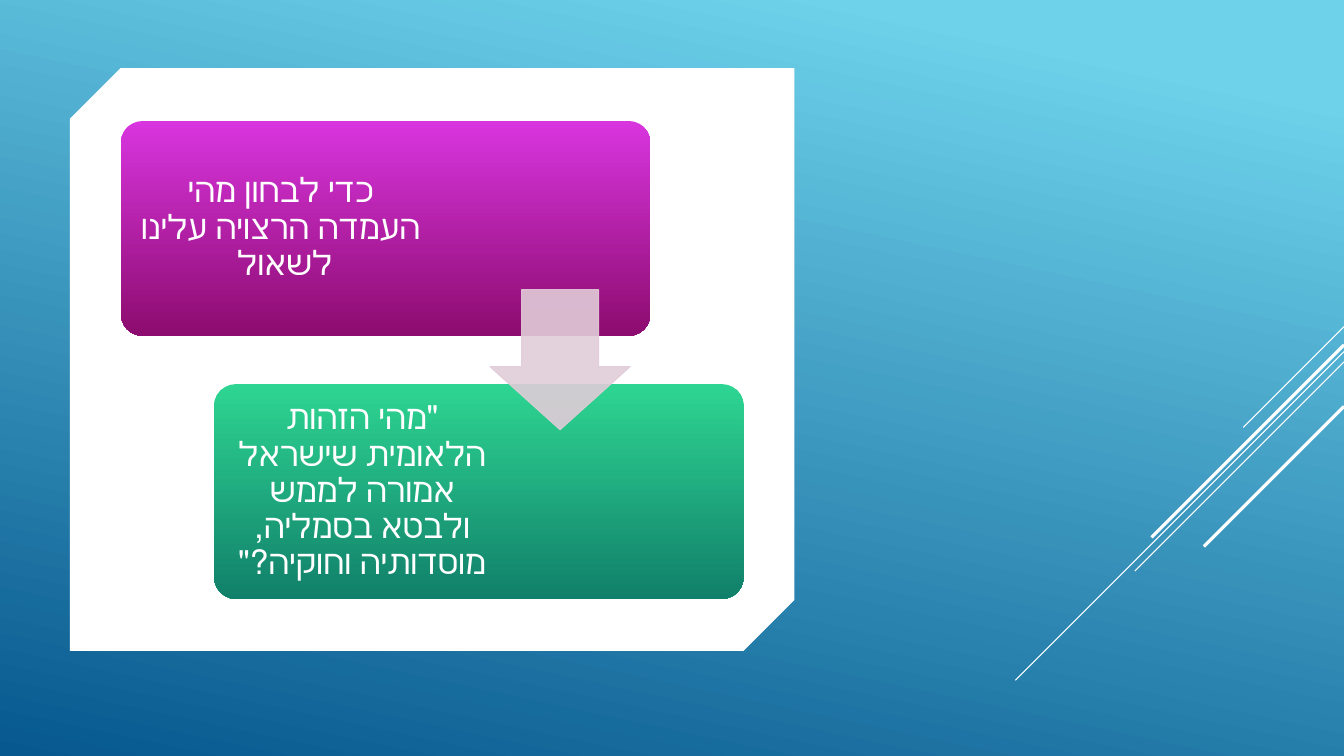
from lxml import etree
from pptx import Presentation
from pptx.dml.color import RGBColor
from pptx.enum.shapes import MSO_CONNECTOR, MSO_SHAPE
from pptx.enum.text import MSO_ANCHOR, PP_ALIGN
from pptx.oxml.ns import qn
from pptx.util import Cm, Pt

COLORS = {
    "sky": "6ED2EB",
    "sea": "06588E",
    "white": "FFFFFF",
    "magenta": "D835DF",
    "plum": "8D0C6F",
    "mint": "2ED592",
    "teal": "11806A",
    "blush": "E1CCD8",
}
WIDTH, HEIGHT = 33.87, 19.05


def rgb(name):
    return RGBColor.from_string(COLORS[name])


class SlideBuilder:
    font = "Quicksand"
    size = 24

    def __init__(self, s):
        self.s = s

    def shape(self, kind, x, y, w, h, adjustments=()):
        sp = self.s.shapes.add_shape(kind, Cm(x), Cm(y), Cm(w), Cm(h))
        sp.shadow.inherit = False
        sp.line.fill.background()
        for i, value in enumerate(adjustments):
            sp.adjustments[i] = value
        return sp

    def solid(self, sp, color):
        sp.fill.solid()
        sp.fill.fore_color.rgb = rgb(color)

    def gradient(self, sp, colors, start=0, angle=90):
        sp.fill.gradient()
        sp.fill.gradient_angle = 360 - angle
        for stop, color, position in zip(sp.fill.gradient_stops, colors, (start, 1)):
            stop.color.rgb = rgb(color)
            stop.position = position

    def alpha(self, fill_parent, percent):
        clr = fill_parent.find(qn("a:solidFill"))[0]
        etree.SubElement(clr, qn("a:alpha")).set("val", str(percent * 1000))

    def diagonal(self, y, length, weight):
        c = self.s.shapes.add_connector(
            MSO_CONNECTOR.STRAIGHT, Cm(WIDTH), Cm(y), Cm(WIDTH - length), Cm(y + length)
        )
        c.line.color.rgb = rgb("white")
        c.line.width = Pt(weight)
        etree.SubElement(c._element.spPr, qn("a:effectLst"))

    def text(self, x, y, w, h, words):
        tf = self.s.shapes.add_textbox(Cm(x), Cm(y), Cm(w), Cm(h)).text_frame
        tf.word_wrap = True
        tf.vertical_anchor = MSO_ANCHOR.MIDDLE
        tf.margin_left = tf.margin_right = tf.margin_top = tf.margin_bottom = Cm(0.25)
        p = tf.paragraphs[0]
        p.alignment = PP_ALIGN.CENTER
        p.line_spacing = 0.9
        p.space_after = Pt(0.35 * self.size)
        p._p.get_or_add_pPr().set("rtl", "1")
        r = p.add_run()
        r.text = words
        r.font.size = Pt(self.size)
        r.font.name = self.font
        r.font.color.rgb = rgb("white")

    def card(self, x, y, colors, text_width, words):
        w, h, inset = 13.34, 5.41, 0.15
        sp = self.shape(MSO_SHAPE.ROUNDED_RECTANGLE, x, y, w, h, [0.1])
        self.gradient(sp, colors)
        self.text(x + inset, y + inset, text_width, h - 2 * inset, words)

    def arrow(self, x, y, size):
        sp = self.shape(MSO_SHAPE.DOWN_ARROW, x, y, size, size, [0.55, 0.45])
        self.solid(sp, "blush")
        sp.line.color.rgb = rgb("blush")
        sp.line.width = Pt(0.75)
        spPr = sp._element.spPr
        for parent in (spPr, spPr.find(qn("a:ln"))):
            self.alpha(parent, 90)


def main():
    prs = Presentation()
    prs.slide_width, prs.slide_height = Cm(WIDTH), Cm(HEIGHT)
    b = SlideBuilder(prs.slides.add_slide(prs.slide_layouts[6]))

    backdrop = b.shape(MSO_SHAPE.RECTANGLE, 0, 0, WIDTH, HEIGHT)
    b.gradient(backdrop, ("sky", "sea"), start=0.1, angle=102)
    panel = b.shape(
        MSO_SHAPE.SNIP_2_DIAG_RECTANGLE, 1.76, 1.72, 18.26, 14.68, [0.087, 0]
    )
    b.solid(panel, "white")

    for y, length, weight in (
        (8.23, 2.54, 0.75),
        (8.86, 8.28, 0.75),
        (9.12, 5.27, 0.75),
        (8.69, 4.85, 2.25),
        (10.24, 3.53, 2.25),
    ):
        b.diagonal(y, length, weight)

    b.card(3.05, 3.05, ("magenta", "plum"), 7.74,
           "כדי לבחון מהי העמדה הרצויה עלינו לשאול ")
    b.card(5.4, 9.68, ("mint", "teal"), 7.16,
           '"מהי הזהות הלאומית שישראל אמורה לממש ולבטא בסמליה, מוסדותיה וחוקיה?"')
    b.arrow(12.35, 7.3, 3.53)

    prs.save("out.pptx")


if __name__ == "__main__":
    main()
